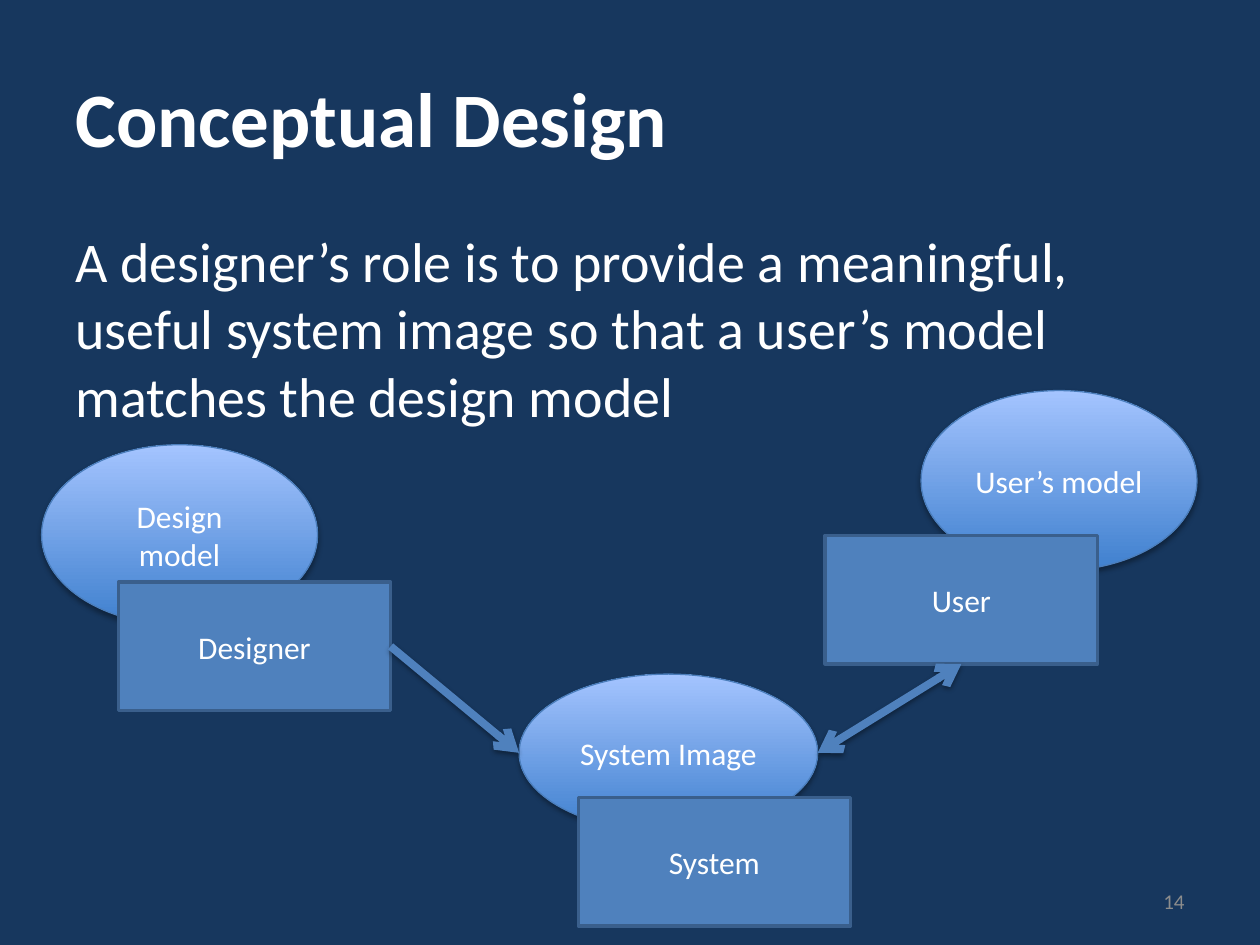
from pptx import Presentation
from pptx.util import Inches, Pt
from pptx.dml.color import RGBColor
from pptx.enum import shapes, text
from pptx.oxml import parse_xml
from pptx.oxml.ns import nsdecls


class Theme:
    font = "Calibri"
    back, white, grey = "17375E", "FFFFFF", "8C8C8C"
    box, edge = "4F81BD", "3A5F8C"
    low, high, rim = "3F80CE", "A4C4FF", "4B7EBC"
    head, body, label, small = 44, 32, 18, 12


rgb = RGBColor.from_string
Align, Anchor = text.PP_ALIGN, text.MSO_ANCHOR
Kind = shapes.MSO_SHAPE


def write(shape, words, size=Theme.label, color=Theme.white, bold=False,
          align=Align.CENTER, anchor=Anchor.MIDDLE):
    frame = shape.text_frame
    frame.word_wrap = True
    frame.vertical_anchor = anchor
    para = frame.paragraphs[0]
    para.alignment = align
    run = para.add_run()
    run.text = words
    run.font.name, run.font.size, run.font.bold = Theme.font, Pt(size), bold
    run.font.color.rgb = rgb(color)


def shade(shape, alpha, dist):
    """Give the shape a soft shadow straight below it."""
    shape._element.spPr.append(parse_xml(
        f'<a:effectLst {nsdecls("a")}><a:outerShdw blurRad="{Pt(3.1)}" '
        f'dist="{Pt(dist)}" dir="5400000" rotWithShape="0">'
        f'<a:srgbClr val="000000"><a:alpha val="{alpha * 1000}"/></a:srgbClr>'
        '</a:outerShdw></a:effectLst>'))


prs = Presentation()
prs.slide_width, prs.slide_height = Inches(10), Inches(7.5)
slide = prs.slides.add_slide(prs.slide_layouts[6])
slide.background.fill.solid()
slide.background.fill.fore_color.rgb = rgb(Theme.back)

# Each model is an oval, partly covered by the box of its owner
pairs = [
    ("Design model", (0.33, 3.53, 2.19, 1.43), "Designer", (0.94, 4.62)),
    ("User’s model", (7.31, 3.1, 2.19, 1.43), "User", (6.55, 4.25)),
    ("System Image", (4.12, 5.35, 2.37, 1.25), "System", (4.59, 6.33)),
]
ovals, boxes = {}, {}
for model, area, owner, spot in pairs:
    oval = slide.shapes.add_shape(Kind.OVAL, *map(Inches, area))
    oval.fill.gradient()
    oval.fill.gradient_angle = 90
    for stop, color in zip(oval.fill.gradient_stops, (Theme.low, Theme.high)):
        stop.color.rgb = rgb(color)
    oval.line.color.rgb = rgb(Theme.rim)
    oval.line.width = Pt(0.75)
    shade(oval, 35, 1.8)
    write(oval, model)
    ovals[model] = oval

    box = slide.shapes.add_shape(Kind.RECTANGLE, *map(Inches, spot),
                                 Inches(2.16), Inches(1.02))
    box.shadow.inherit = False
    box.fill.solid()
    box.fill.fore_color.rgb = rgb(Theme.box)
    box.line.color.rgb = rgb(Theme.edge)
    box.line.width = Pt(2)
    write(box, owner)
    boxes[owner] = box

notes = [
    ("Conceptual Design", (0.5, 0.3, 9, 1.25),
     dict(size=Theme.head, bold=True, align=Align.LEFT)),
    ("A designer’s role is to provide a meaningful, useful system image "
     "so that a user’s model matches the design model", (0.5, 1.75, 9, 1.91),
     dict(size=Theme.body, align=Align.LEFT, anchor=Anchor.TOP)),
    ("14", (7.17, 6.95, 2.33, 0.4),
     dict(size=Theme.small, color=Theme.grey, align=Align.RIGHT)),
]
for words, area, look in notes:
    write(slide.shapes.add_textbox(*map(Inches, area)), words, **look)

# Arrows run from a box to the left or right tip of the system image
image = ovals["System Image"]
mid = image.top + image.height // 2
links = [
    ("Designer", 3, image.left, ["tailEnd"]),
    ("User", 2, image.left + image.width, ["headEnd", "tailEnd"]),
]
for owner, side, tip, ends in links:
    link = slide.shapes.add_connector(shapes.MSO_CONNECTOR.STRAIGHT,
                                      0, 0, tip, mid)
    link.begin_connect(boxes[owner], side)
    link.line.color.rgb = rgb(Theme.box)
    link.line.width = Pt(4.5)
    for end in ends:
        link.line._get_or_add_ln().append(
            parse_xml(f'<a:{end} {nsdecls("a")} type="arrow"/>'))
    shade(link, 38, 1.6)

prs.save("out.pptx")
